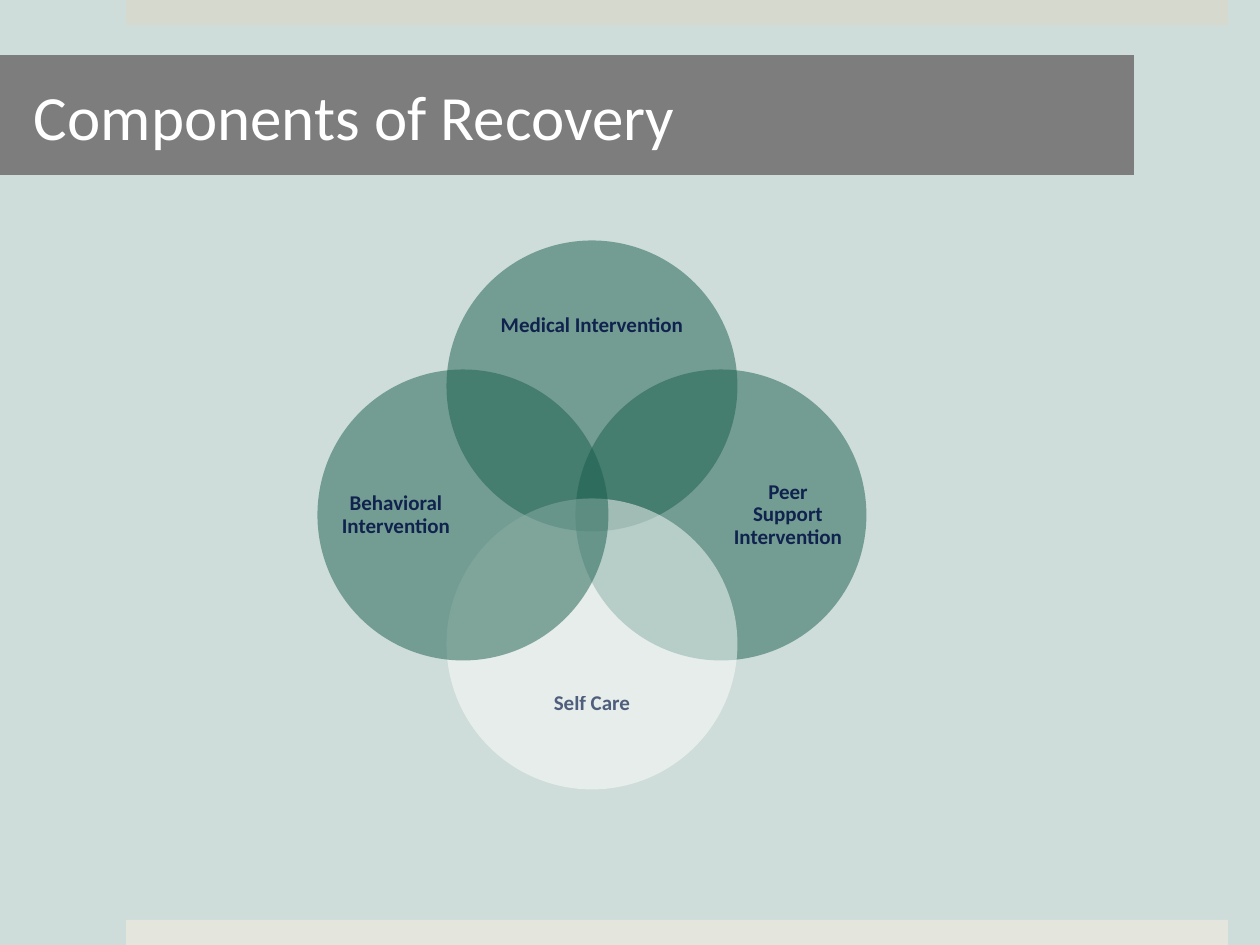
from dataclasses import dataclass

from lxml import etree
from pptx import Presentation
from pptx.dml.color import RGBColor
from pptx.enum.shapes import MSO_SHAPE
from pptx.enum.text import MSO_ANCHOR, PP_ALIGN
from pptx.oxml.ns import qn
from pptx.util import Emu, Inches, Pt

RECT, OVAL = MSO_SHAPE.RECTANGLE, MSO_SHAPE.OVAL
MIDDLE = MSO_ANCHOR.MIDDLE
LEFT, CENTER = PP_ALIGN.LEFT, PP_ALIGN.CENTER

SCALE = Inches(1) / 126
MID_X, MID_Y = 592, 515
SIZE, STEP = 291, 129


@dataclass(frozen=True)
class Theme:
    back: str = "CEDDD9"
    top: str = "D6D9CD"
    foot: str = "E4E6DE"
    band: str = "7D7D7D"
    green: str = "195F4D"
    white: str = "FFFFFF"
    ink: str = "10224E"
    font: str = "Calibri"
    title: int = 36
    label: int = 12


@dataclass(frozen=True)
class Part:
    """One circle; dx and dy point from the middle of the diagram."""
    text: str
    dx: int
    dy: int
    fill: str
    alpha: int = 50
    ink_alpha: int = 100


THEME = Theme()
PARTS = [
    Part("Medical Intervention", 0, -1, THEME.green),
    Part("Peer Support Intervention", 1, 0, THEME.green),
    Part("Self Care", 0, 1, THEME.white, 49, 70),
    Part("Behavioral Intervention", -1, 0, THEME.green),
]


def px(n: float) -> Emu:
    return Emu(round(n * SCALE))


def box(x: float, y: float, w: int, h: int) -> list[Emu]:
    return [px(n) for n in (x, y, w, h)]


def mid_box(x: int, y: int, w: int, h: int) -> list[Emu]:
    """Box centred on x, y."""
    return box(x - w / 2, y - h / 2, w, h)


def paint(fill, color: str, alpha: int = 100) -> None:
    """Solid fill with opacity in percent."""
    fill.solid()
    fill.fore_color.rgb = RGBColor.from_string(color)
    if alpha < 100:
        tone = fill._xPr.find(qn("a:solidFill"))[0]
        etree.SubElement(tone, qn("a:alpha"), val=str(alpha * 1000))


def add_shape(shapes, kind, area: list[Emu], color: str, alpha: int = 100) -> None:
    shape = shapes.add_shape(kind, *area)
    shape.shadow.inherit = False
    shape.line.fill.background()
    paint(shape.fill, color, alpha)


def set_inset(frame, left: int, other: int) -> None:
    frame.margin_left = px(left)
    frame.margin_right = frame.margin_top = frame.margin_bottom = px(other)
    frame.vertical_anchor = MIDDLE
    frame.word_wrap = True


def add_part(shapes, part: Part) -> None:
    x, y = MID_X + part.dx * STEP, MID_Y + part.dy * STEP
    add_shape(shapes, OVAL, mid_box(x, y, SIZE, SIZE), part.fill, part.alpha)
    w, h = (112, 224) if part.dx else (224, 92)
    x, y = MID_X + part.dx * 196, MID_Y + part.dy * 189
    frame = shapes.add_textbox(*mid_box(x, y, w, h)).text_frame
    set_inset(frame, 0, 0)
    para = frame.paragraphs[0]
    para.text = part.text
    para.alignment = CENTER
    para.line_spacing = 0.9
    para.font.name = THEME.font
    para.font.size = Pt(THEME.label)
    para.font.bold = True
    # Colour goes on the run so that its opacity is kept.
    paint(para.runs[0].font.fill, THEME.ink, part.ink_alpha)


def set_title(title, text: str) -> None:
    title.left, title.top, title.width, title.height = box(0, 55, 1134, 120)
    paint(title.fill, THEME.band)
    frame = title.text_frame
    set_inset(frame, 34, 6)
    para = frame.paragraphs[0]
    para.text = text
    para.alignment = LEFT
    para.font.name = THEME.font
    para.font.size = Pt(THEME.title)
    paint(para.font.fill, THEME.white)


def main() -> None:
    deck = Presentation()
    deck.slide_width, deck.slide_height = px(1260), px(945)
    slide = deck.slides.add_slide(deck.slide_layouts[5])
    paint(slide.background.fill, THEME.back)
    for y, color in ((0, THEME.top), (920, THEME.foot)):
        add_shape(slide.shapes, RECT, box(126, y, 1102, 25), color)
    venn = slide.shapes.add_group_shape()
    for part in PARTS:
        add_part(venn.shapes, part)
    set_title(slide.shapes.title, "Components of Recovery")
    deck.save("out.pptx")


if __name__ == "__main__":
    main()
